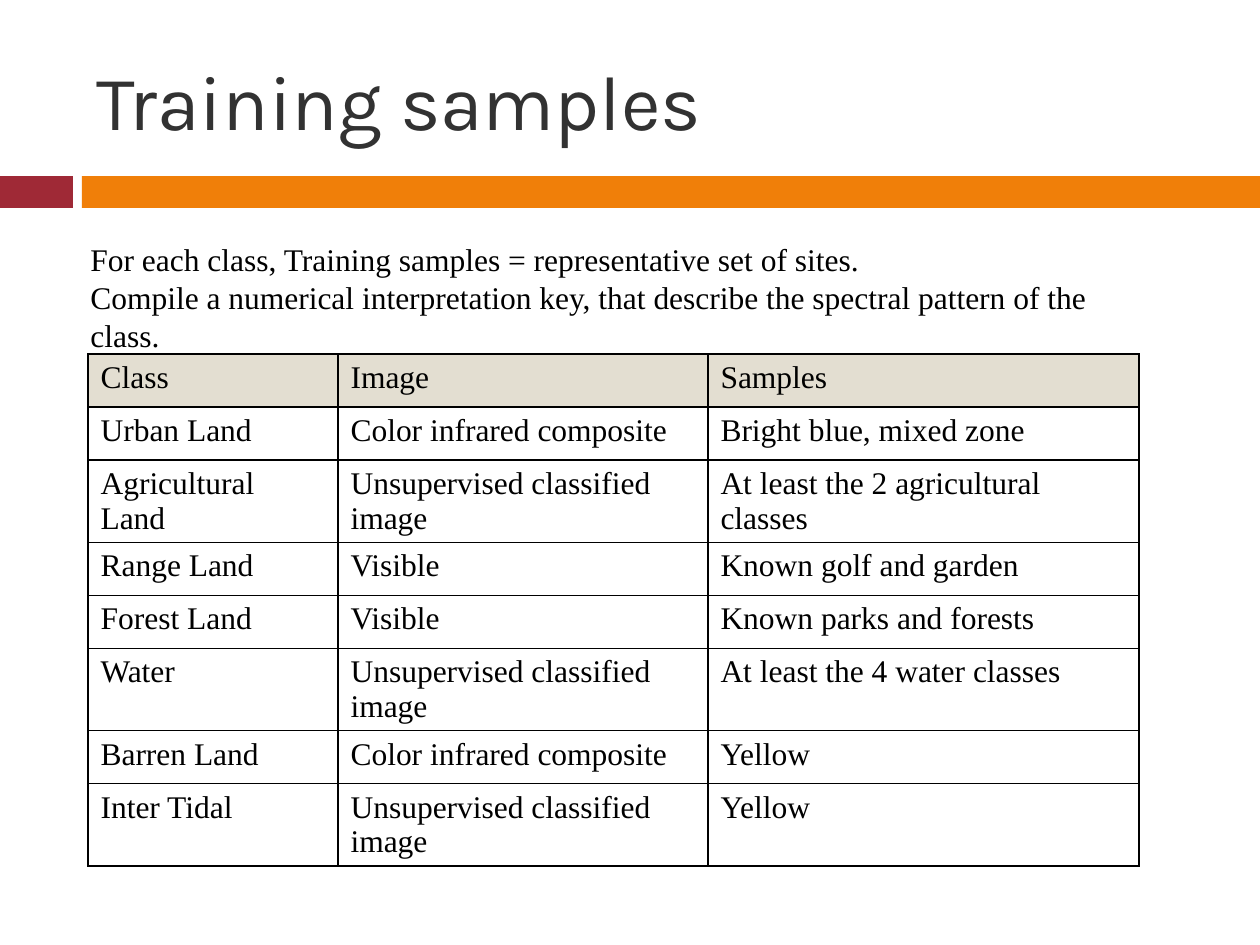
import pptx
import pptx.util
import pptx.dml.color
import pptx.enum.shapes
import pptx.enum.text
import pptx.oxml
import pptx.oxml.ns

EMU_PER_PX = 914400 / 126


def px(length):
    return pptx.util.Emu(round(length * EMU_PER_PX))


def colour(value):
    return pptx.dml.color.RGBColor.from_string(value)


class SlideBuilder:
    heading_font = "Karla"
    body_font = "Times New Roman"
    heading_colour = "323232"
    ink = "000000"

    def __init__(self, page):
        self.page = page

    def format_text(self, frame, font, size, text_colour):
        for para in frame.paragraphs:
            para.alignment = pptx.enum.text.PP_ALIGN.LEFT
            for span in para.runs:
                span.font.name = font
                span.font.size = pptx.util.Pt(size)
                span.font.color.rgb = colour(text_colour)

    def title(self, text, left, top, width, height):
        title = self.page.shapes.title
        title.left, title.top = px(left), px(top)
        title.width, title.height = px(width), px(height)
        frame = title.text_frame
        frame.text = text
        frame.vertical_anchor = pptx.enum.text.MSO_ANCHOR.MIDDLE
        self.format_text(frame, self.heading_font, 44, self.heading_colour)

    def bar(self, left, top, width, height, fill):
        bar = self.page.shapes.add_shape(
            pptx.enum.shapes.MSO_SHAPE.RECTANGLE,
            px(left), px(top), px(width), px(height))
        bar.shadow.inherit = False
        bar.fill.solid()
        bar.fill.fore_color.rgb = colour(fill)
        bar.line.fill.background()

    def text(self, lines, left, top, width, height):
        box = self.page.shapes.add_textbox(px(left), px(top), px(width), px(height))
        frame = box.text_frame
        frame.word_wrap = True
        frame.text = "\n".join(lines)
        self.format_text(frame, self.body_font, 18, self.ink)

    def border(self, cell):
        properties = cell._tc.get_or_add_tcPr()
        for index, side in enumerate(("lnL", "lnR", "lnT", "lnB")):
            line = pptx.oxml.parse_xml(
                f'<a:{side} {pptx.oxml.ns.nsdecls("a")} w="12700"><a:solidFill>'
                f'<a:srgbClr val="{self.ink}"/></a:solidFill></a:{side}>')
            properties.insert(index, line)

    def table(self, rows, left, top, column_widths, row_height, header_fill):
        table = self.page.shapes.add_table(
            len(rows), len(column_widths), px(left), px(top),
            px(sum(column_widths)), px(row_height * len(rows))).table
        table.first_row = False
        table.horz_banding = False
        for column, width in zip(table.columns, column_widths):
            column.width = px(width)
        for row_index, row in enumerate(rows):
            table.rows[row_index].height = px(row_height)
            for column_index, text in enumerate(row):
                cell = table.cell(row_index, column_index)
                cell.text_frame.text = text
                self.format_text(cell.text_frame, self.body_font, 18, self.ink)
                if row_index == 0:
                    cell.fill.solid()
                    cell.fill.fore_color.rgb = colour(header_fill)
                else:
                    cell.fill.background()
                self.border(cell)


def main():
    deck = pptx.Presentation()
    deck.slide_width, deck.slide_height = px(1260), px(945)
    builder = SlideBuilder(deck.slides.add_slide(deck.slide_layouts[5]))

    builder.bar(0, 176, 73, 32, "9F2936")
    builder.bar(82, 176, 1178, 32, "F07F09")
    builder.title("Training samples", 84, 32, 1124, 136)

    infrared = "Color infrared composite"
    unsupervised = "Unsupervised classified image"
    rows = [
        ("Class", "Image", "Samples"),
        ("Urban Land", infrared, "Bright blue, mixed zone"),
        ("Agricultural Land", unsupervised, "At least the 2 agricultural classes"),
        ("Range Land", "Visible", "Known golf and garden"),
        ("Forest Land", "Visible", "Known parks and forests"),
        ("Water", unsupervised, "At least the 4 water classes"),
        ("Barren Land", infrared, "Yellow"),
        ("Inter Tidal", unsupervised, "Yellow"),
    ]
    builder.table(rows, 88, 354, (250, 370, 431), 53, "E3DED1")
    builder.text(
        ["For each class, Training samples = representative set of sites.",
         "Compile a numerical interpretation key, that describe the spectral "
         "pattern of the class."],
        78, 234, 1053, 89)
    deck.save("out.pptx")


if __name__ == "__main__":
    main()
